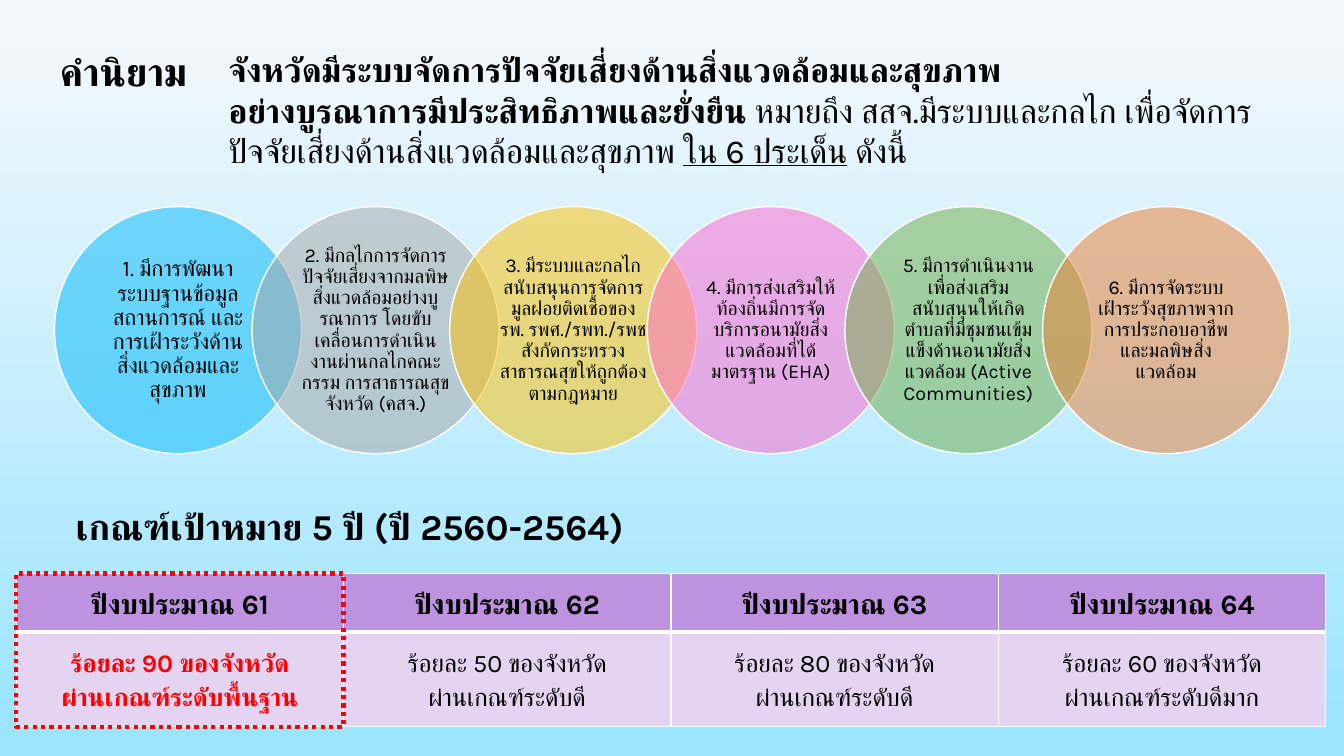
import lxml.etree
import pptx
import pptx.dml.color
import pptx.enum.dml
import pptx.enum.shapes
import pptx.enum.text
import pptx.oxml
import pptx.oxml.ns
import pptx.util

W, H = 13.33, 7.5
FONT = "Karla"
CENTER = pptx.enum.text.PP_ALIGN.CENTER
LEFT = pptx.enum.text.PP_ALIGN.LEFT
MIDDLE = pptx.enum.text.MSO_ANCHOR.MIDDLE
TOP = pptx.enum.text.MSO_ANCHOR.TOP
SHAPE = pptx.enum.shapes.MSO_SHAPE
IN = pptx.util.Inches

ISSUES = [
    ("1. มีการพัฒนาระบบฐานข้อมูล สถานการณ์ และการเฝ้าระวังด้านสิ่งแวดล้อมและสุขภาพ", "00B9FA", 16),
    ("2. มีกลไกการจัดการปัจจัยเสี่ยงจากมลพิษสิ่งแวดล้อมอย่างบูรณาการ โดยขับเคลื่อนการดำเนินงาน"
     "ผ่านกลไกคณะกรรม การสาธารณสุขจังหวัด (คสจ.)", "A6A6A6", 14),
    ("3. มีระบบและกลไกสนับสนุนการจัดการมูลฝอยติดเชื้อของรพ. รพศ./รพท./รพช "
     "สังกัดกระทรวงสาธารณสุขให้ถูกต้องตามกฎหมาย", "FFC000", 14),
    ("4. มีการส่งเสริมให้ท้องถิ่นมีการจัดบริการอนามัยสิ่งแวดล้อมที่ได้มาตรฐาน (EHA)", "FF66CC", 14),
    ("5. มีการดำเนินงานเพื่อส่งเสริม สนับสนุนให้เกิดตำบลที่มีชุมชนเข้มแข็งด้านอนามัยสิ่งแวดล้อม "
     "(Active Communities)", "70AD47", 14),
    ("6. มีการจัดระบบ\nเฝ้าระวังสุขภาพจากการประกอบอาชีพและมลพิษสิ่งแวดล้อม", "ED7D31", 14),
]
TARGETS = [
    ("ปีงบประมาณ 61", "ร้อยละ 90 ของจังหวัด", "ผ่านเกณฑ์ระดับพื้นฐาน"),
    ("ปีงบประมาณ 62", "ร้อยละ 50 ของจังหวัด", "ผ่านเกณฑ์ระดับดี"),
    ("ปีงบประมาณ 63", "ร้อยละ 80 ของจังหวัด", "ผ่านเกณฑ์ระดับดี"),
    ("ปีงบประมาณ 64", "ร้อยละ 60 ของจังหวัด", "ผ่านเกณฑ์ระดับดีมาก"),
]


def paint(color, value):
    """Set a colour format from a hex string."""
    color.rgb = pptx.dml.color.RGBColor.from_string(value)


def fill_solid(fill, value):
    """Give a fill one solid colour."""
    fill.solid()
    paint(fill.fore_color, value)


def emu(box):
    """Turn a box in inches into lengths."""
    return [IN(v) for v in box]


def add_run(p, text, size, bold=False, color="000000", underline=None):
    """Add one formatted run, for Latin and Thai script alike."""
    r = p.add_run()
    r.text = text
    r.font.size = pptx.util.Pt(size)
    r.font.bold = bold
    r.font.underline = underline
    r.font.name = FONT
    paint(r.font.color, color)
    cs = lxml.etree.SubElement(r.font._element, pptx.oxml.ns.qn("a:cs"))
    cs.set("typeface", FONT)


def set_frame(tf, anchor, align, margins=(0.1, 0.05)):
    """Prepare a text frame and return its first paragraph."""
    tf.word_wrap = True
    tf.vertical_anchor = anchor
    tf.margin_left = tf.margin_right = IN(margins[0])
    tf.margin_top = tf.margin_bottom = IN(margins[1])
    tf.paragraphs[0].alignment = align
    return tf.paragraphs[0]


def background(s):
    """Fill the slide with a vertical gradient."""
    fill = s.background.fill
    fill.gradient()
    fill.gradient_angle = 270
    for stop, (position, value) in zip(fill.gradient_stops, [(0, "F6F8FC"), (0.97, "9BE5FF")]):
        stop.position = position
        paint(stop.color, value)


def title(s, box):
    """Place the title placeholder."""
    sp = s.shapes.title
    sp.left, sp.top, sp.width, sp.height = emu(box)
    add_run(set_frame(sp.text_frame, MIDDLE, CENTER), "คำนิยาม", 28, True)


def definition(s, box):
    """Write the definition beside the title."""
    tf = s.shapes.add_textbox(*emu(box)).text_frame
    p = set_frame(tf, TOP, LEFT)
    add_run(p, "จังหวัดมีระบบจัดการปัจจัยเสี่ยงด้านสิ่งแวดล้อมและสุขภาพ", 24, True)
    p = tf.add_paragraph()
    add_run(p, "อย่างบูรณาการมีประสิทธิภาพและยั่งยืน", 24, True)
    add_run(p, " หมายถึง สสจ.มีระบบและกลไก เพื่อจัดการปัจจัยเสี่ยงด้านสิ่งแวดล้อมและสุขภาพ ", 24)
    add_run(p, "ใน 6 ประเด็น", 24, underline=True)
    add_run(p, " ดังนี้", 24)


def issue_circles(s, box):
    """Draw a row of circles, each overlapping the next by a fifth."""
    left, top, _, size = box
    for i, (text, color, points) in enumerate(ISSUES):
        circle = emu((left + i * 0.8 * size, top, size, size))
        sp = s.shapes.add_shape(SHAPE.OVAL, *circle)
        sp.shadow.inherit = False
        fill_solid(sp.fill, color)
        srgb = sp.fill._xPr.find(".//" + pptx.oxml.ns.qn("a:srgbClr"))
        lxml.etree.SubElement(srgb, pptx.oxml.ns.qn("a:alpha")).set("val", "50000")
        paint(sp.line.color, "FFFFFF")
        sp.line.width = pptx.util.Pt(1)
        p = set_frame(sp.text_frame, MIDDLE, CENTER, (0.13, 0.02))
        p.line_spacing = 0.9
        for n, part in enumerate(text.split("\n")):
            if n:
                p.add_line_break()
            add_run(p, part, points)


def target_heading(s, box):
    """Write the heading above the target table."""
    tf = s.shapes.add_textbox(*emu(box)).text_frame
    add_run(set_frame(tf, MIDDLE, CENTER), "เกณฑ์เป้าหมาย 5 ปี (ปี 2560-2564)", 26, True)


def cell_borders(cell, widths):
    """Draw white borders, with widths in points for left, right, top and bottom."""
    for i, (side, width) in enumerate(zip("LRTB", widths)):
        ln = pptx.oxml.parse_xml(
            f'<a:ln{side} {pptx.oxml.ns.nsdecls("a")} w="{pptx.util.Pt(width)}">'
            f'<a:solidFill><a:srgbClr val="FFFFFF"/></a:solidFill></a:ln{side}>')
        cell._tc.get_or_add_tcPr().insert(i, ln)


def target_cell(cell, lines, size, bold, color, fill, margin, widths):
    """Fill and format one table cell."""
    fill_solid(cell.fill, fill)
    cell_borders(cell, widths)
    cell.vertical_anchor = MIDDLE
    cell.margin_left = cell.margin_right = IN(margin)
    cell.margin_top = cell.margin_bottom = 0
    tf = cell.text_frame
    for i, line in enumerate(lines):
        p = tf.add_paragraph() if i else tf.paragraphs[0]
        p.alignment = CENTER
        p.line_spacing = 1.15
        add_run(p, line, size, bold, color)


def target_table(s, box):
    """Build the yearly targets and outline the first year."""
    left, top, width, height = box
    column = width / len(TARGETS)
    table = s.shapes.add_table(2, len(TARGETS), *emu(box)).table
    for row, share in zip(table.rows, (0.38, 0.62)):
        row.height = IN(height * share)
    for i, (year, *goal) in enumerate(TARGETS):
        table.columns[i].width = IN(column)
        color = "000000" if i else "FF0000"
        target_cell(table.cell(0, i), [year], 20, True, "000000", "BD92DE", 0.1, (1, 1, 1, 3))
        target_cell(table.cell(1, i), goal, 18, i == 0, color, "E4D3F1", 0.07, (1, 1, 3, 1))
    sp = s.shapes.add_shape(SHAPE.RECTANGLE, *emu((left, top, column, height)))
    sp.shadow.inherit = False
    sp.fill.background()
    paint(sp.line.color, "FF0000")
    sp.line.width = pptx.util.Pt(3)
    sp.line.dash_style = pptx.enum.dml.MSO_LINE.ROUND_DOT


def main():
    """Build the slide and save it."""
    prs = pptx.Presentation()
    prs.slide_width, prs.slide_height = IN(W), IN(H)
    s = prs.slides.add_slide(prs.slide_layouts[5])
    background(s)
    title(s, (0.28, 0.39, 1.89, 0.63))
    definition(s, (2.17, 0.44, 10.48, 1.31))
    issue_circles(s, (0.54, 2.05, 12.25, 2.45))
    target_heading(s, (0, 4.92, 6.94, 0.6))
    target_table(s, (0.16, 5.69, 12.99, 1.52))
    prs.save("out.pptx")


if __name__ == "__main__":
    main()
